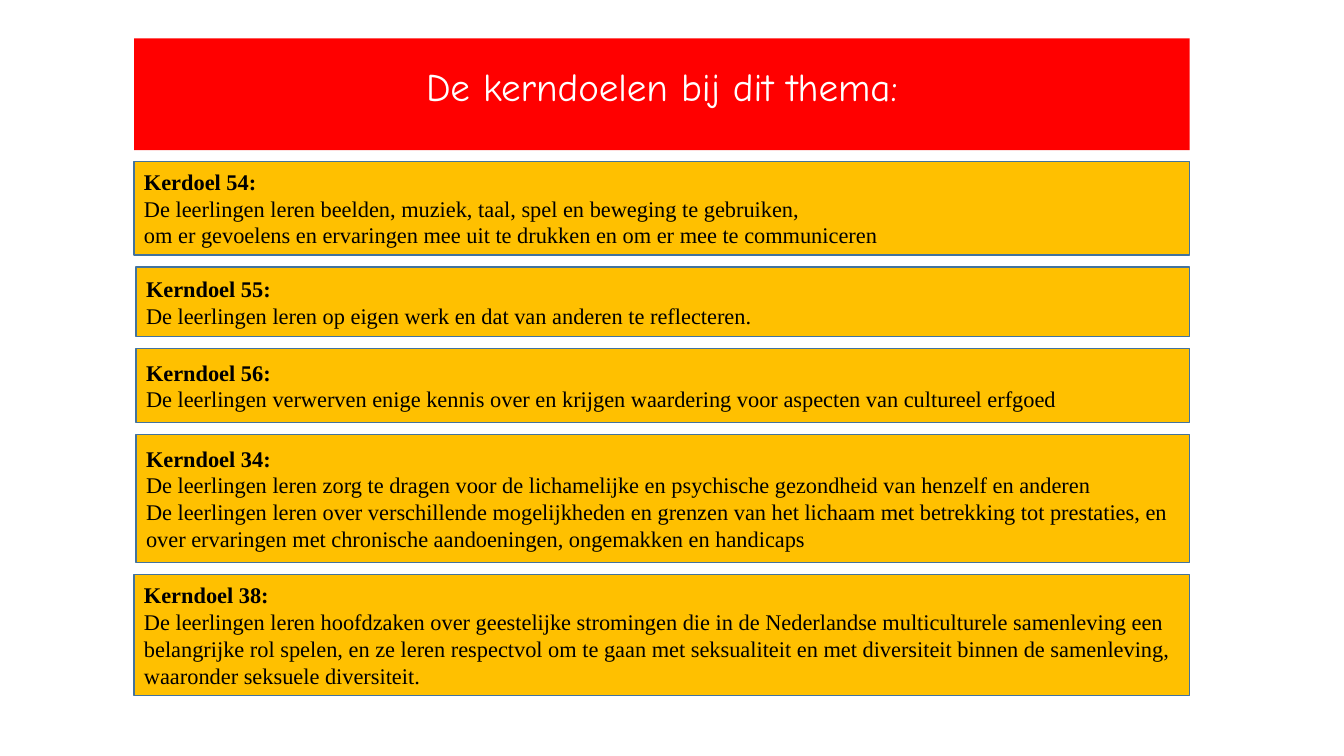
import pptx
import pptx.util
import pptx.dml.color
import pptx.enum.shapes
import pptx.enum.text

Inches, Pt = pptx.util.Inches, pptx.util.Pt

# Content: left edge, height, heading, body paragraphs (\v is a line break)
TITLE = "De kerndoelen bij dit thema:"
GOALS = [
    (1.33, 0.93, "Kerdoel 54:", [
        "De leerlingen leren beelden, muziek, taal, spel en beweging te gebruiken,\v"
        "om er gevoelens en ervaringen mee uit te drukken en om er mee te communiceren"]),
    (1.35, 0.69, "Kerndoel 55:", [
        "De leerlingen leren op eigen werk en dat van anderen te reflecteren."]),
    (1.35, 0.73, "Kerndoel 56:", [
        "De leerlingen verwerven enige kennis over en krijgen waardering voor "
        "aspecten van cultureel erfgoed"]),
    (1.35, 1.27, "Kerndoel 34:", [
        "De leerlingen leren zorg te dragen voor de lichamelijke en psychische "
        "gezondheid van henzelf en anderen",
        "De leerlingen leren over verschillende mogelijkheden en grenzen van het "
        "lichaam met betrekking tot prestaties, en over ervaringen met chronische "
        "aandoeningen, ongemakken en handicaps"]),
    (1.33, 1.2, "Kerndoel 38:", [
        "De leerlingen leren hoofdzaken over geestelijke stromingen die in de "
        "Nederlandse multiculturele samenleving een belangrijke rol spelen, en ze "
        "leren respectvol om te gaan met seksualiteit en met diversiteit binnen de "
        "samenleving, waaronder seksuele diversiteit."]),
]
COLORS = {"title": "FF0000", "goal": "FFC000", "border": "43739E",
          "white": "FFFFFF", "black": "000000"}
LEFT, RIGHT = 1.33, 11.8
FIRST_TOP, GAP = 1.6, 0.12


def rgb(name):
    return pptx.dml.color.RGBColor.from_string(COLORS[name])


def add_box(slide, left, top, height, fill):
    """Filled rectangle that reaches the common right edge."""
    sp = slide.shapes.add_shape(
        pptx.enum.shapes.MSO_SHAPE.RECTANGLE,
        Inches(left), Inches(top), Inches(RIGHT - left), Inches(height))
    sp.shadow.inherit = False
    sp.fill.solid()
    sp.fill.fore_color.rgb = rgb(fill)
    sp.text_frame.word_wrap = True
    sp.text_frame.vertical_anchor = pptx.enum.text.MSO_ANCHOR.MIDDLE
    return sp


def format_paragraph(p, font, size, color, align, bold=False):
    p.alignment = align
    for r in p.runs:
        r.font.name = font
        r.font.size = Pt(size)
        r.font.bold = bold
        r.font.color.rgb = rgb(color)


prs = pptx.Presentation()
prs.slide_width, prs.slide_height = Inches(13.33), Inches(7.5)
s = prs.slides.add_slide(prs.slide_layouts[6])
ALIGN = pptx.enum.text.PP_ALIGN

# Title bar, text slightly above the middle
sp = add_box(s, LEFT, 0.38, 1.11, "title")
sp.line.fill.background()
sp.text_frame.margin_bottom = Inches(0.22)
sp.text_frame.text = TITLE
format_paragraph(sp.text_frame.paragraphs[0], "Comic Neue", 27.9, "white", ALIGN.CENTER)

# Goal boxes, stacked with equal gaps
top = FIRST_TOP
for left, height, heading, body in GOALS:
    sp = add_box(s, left, top, height, "goal")
    sp.line.color.rgb = rgb("border")
    sp.line.width = Pt(1)
    tf = sp.text_frame
    tf.text = heading
    for text in body:
        tf.add_paragraph().text = text
    for i, p in enumerate(tf.paragraphs):
        format_paragraph(p, "Times New Roman", 16, "black", ALIGN.LEFT, bold=i == 0)
    top += height + GAP

prs.save("out.pptx")
